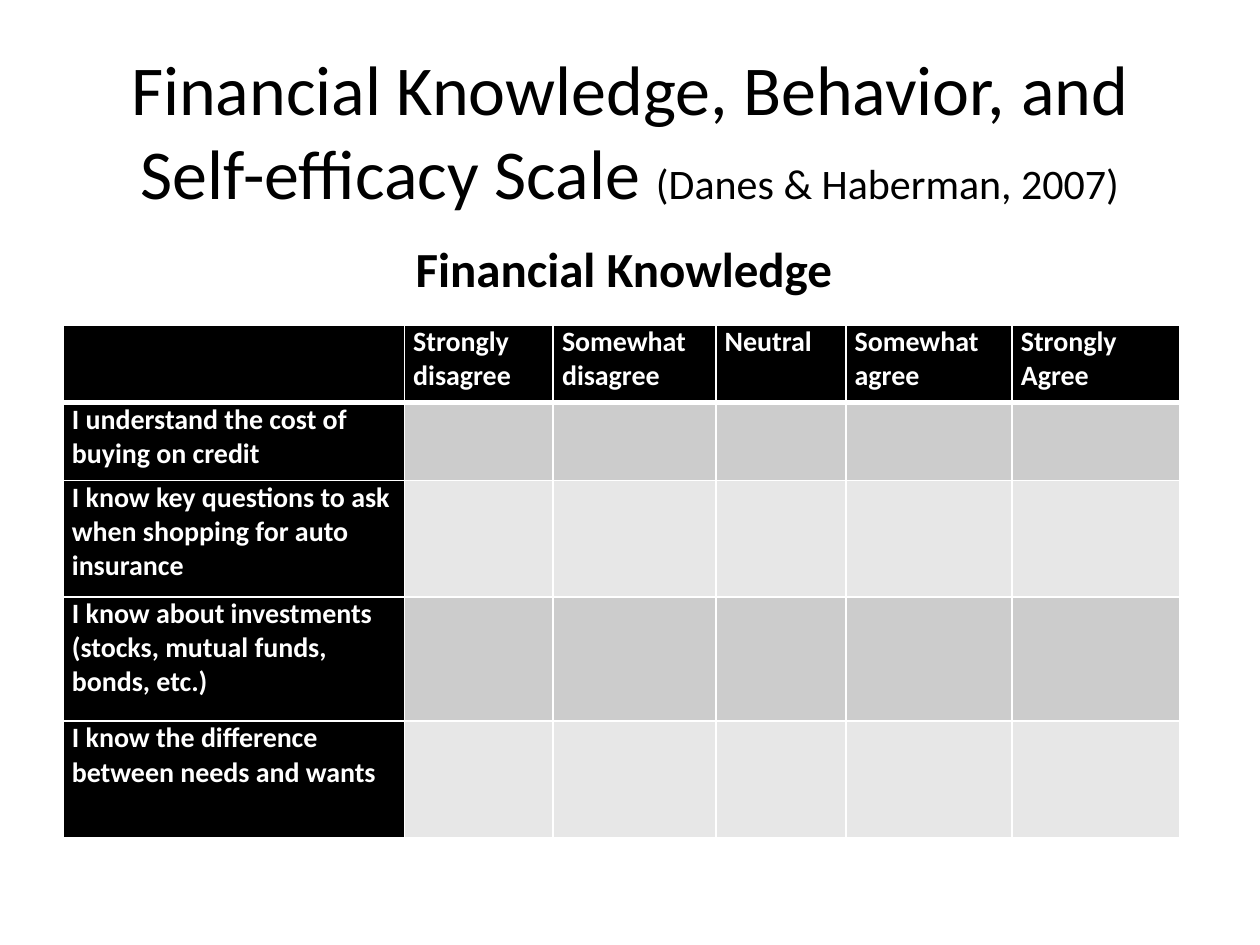
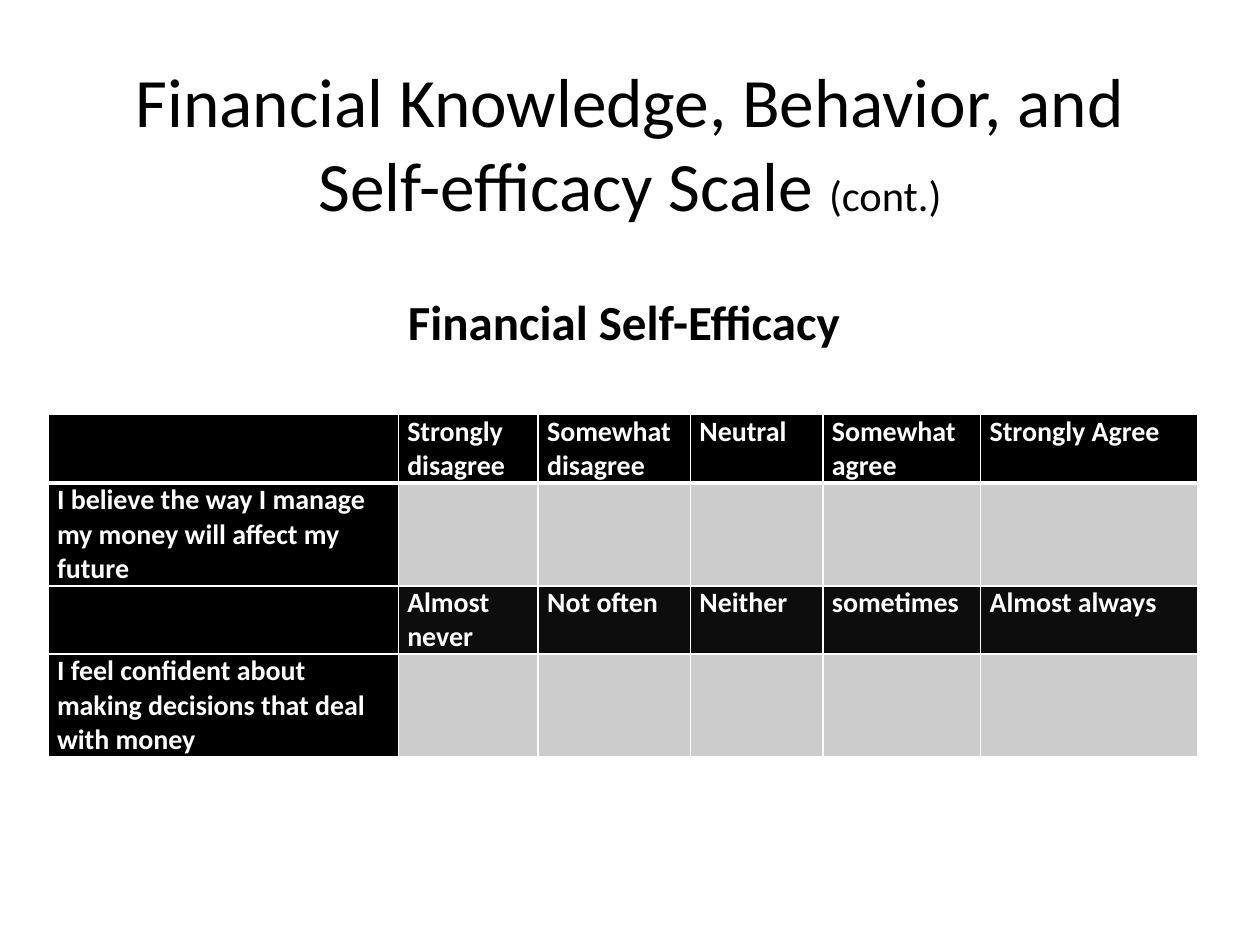
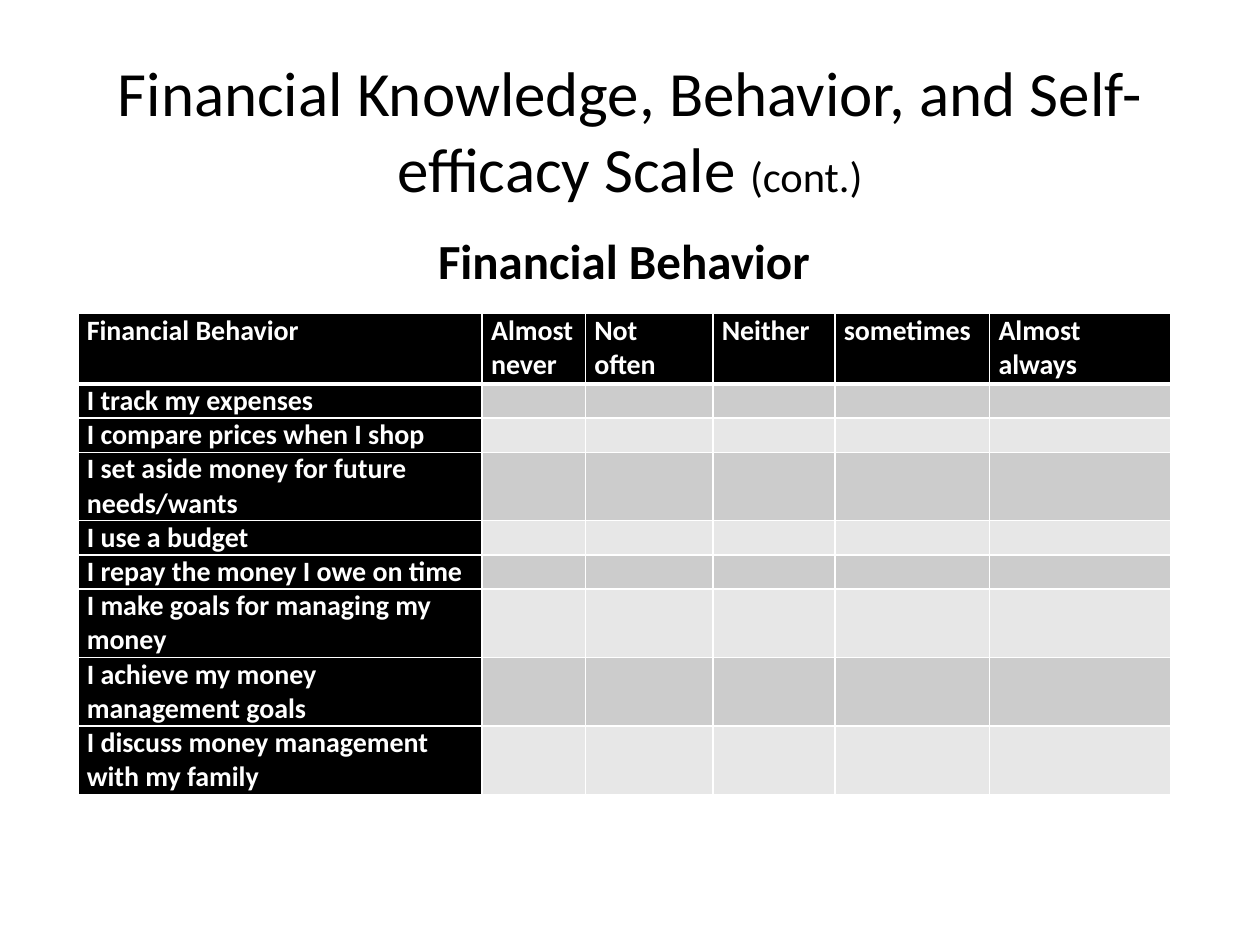
from dataclasses import dataclass

from lxml import etree
from pptx import Presentation
from pptx.dml.color import RGBColor
from pptx.enum.text import MSO_ANCHOR, PP_ALIGN
from pptx.oxml.ns import qn
from pptx.slide import Slide
from pptx.table import _Cell
from pptx.text.text import _Paragraph
from pptx.util import Cm, Pt

CENTER = PP_ALIGN.CENTER
MIDDLE = MSO_ANCHOR.MIDDLE

COLORS = {
    "black": "000000",
    "near_black": "0D0D0D",
    "white": "FFFFFF",
    "dark_band": "CCCCCC",
    "light_band": "E7E7E7",
}
FONT = "Calibri"
TITLE = "Financial Knowledge, Behavior, and Self-efficacy Scale "
CELL_SIZE = 16
ONE_LINE, TWO_LINES, THREE_LINES = 0.69, 1.38, 2.07

AGREEMENT = ("Strongly disagree", "Somewhat disagree", "Neutral", "Somewhat agree", "Strongly Agree")
FREQUENCY = ("Almost never", "Not often", "Neither", "sometimes", "Almost always")


@dataclass
class Row:
    height: float
    label: str
    answers: tuple[str, ...] = ("",) * 5


@dataclass
class Scale:
    """One slide of the questionnaire; lengths in centimetres, sizes in points."""
    title_top: float
    title_size: float
    note: str
    note_size: float
    heading: str
    heading_top: float
    table_left: float
    table_top: float
    columns: tuple[float, ...]
    rows: tuple[Row, ...]


SCALES = (
    Scale(
        1.02, 40, "(Danes & Haberman, 2007)", 24,
        "Financial Knowledge", 4.67,
        1.27, 6.55, (6.88, 3, 3.28, 2.62, 3.35, 3.38),
        (
            Row(1.57, "", AGREEMENT),
            Row(1.57, "I understand the cost of buying on credit"),
            Row(2.34, "I know key questions to ask when shopping for auto insurance"),
            Row(2.51, "I know about investments (stocks, mutual funds, bonds, etc.)"),
            Row(2.34, "I know the difference between needs and wants"),
        ),
    ),
    Scale(
        1.27, 39.6, "(cont.)", 24.3,
        "Financial Self-Efficacy", 5.74,
        0.97, 8.36, (7.06, 2.82, 3.07, 2.67, 3.18, 4.37),
        (
            Row(TWO_LINES, "", AGREEMENT),
            Row(THREE_LINES, "I believe the way I manage my money will affect my future"),
            Row(TWO_LINES, "", FREQUENCY),
            Row(THREE_LINES, "I feel confident about making decisions that deal with money"),
        ),
    ),
    Scale(
        1.02, 36, "(cont.)", 24.3,
        "Financial Behavior", 4.52,
        1.57, 6.32, (8.15, 2.08, 2.57, 2.46, 3.12, 3.66),
        (
            Row(1.42, "Financial Behavior", FREQUENCY),
            Row(ONE_LINE, "I track my expenses"),
            Row(ONE_LINE, "I compare prices when I shop"),
            Row(TWO_LINES, "I set aside money for future needs/wants"),
            Row(ONE_LINE, "I use a budget"),
            Row(ONE_LINE, "I repay the money I owe on time"),
            Row(TWO_LINES, "I make goals for managing my money"),
            Row(TWO_LINES, "I achieve my money management goals"),
            Row(TWO_LINES, "I discuss money management with my family"),
        ),
    ),
)


def rgb(name: str) -> RGBColor:
    return RGBColor.from_string(COLORS[name])


def set_font(para: _Paragraph, color: str, size: float | None = None, bold: bool = False) -> None:
    para.font.name = FONT
    para.font.color.rgb = rgb(color)
    para.font.bold = bold
    if size:
        para.font.size = Pt(size)


def add_centered_box(page: Slide, left: float, top: float, width: float, height: float) -> _Paragraph:
    box = page.shapes.add_textbox(Cm(left), Cm(top), Cm(width), Cm(height))
    box.text_frame.word_wrap = True
    box.text_frame.vertical_anchor = MIDDLE
    para = box.text_frame.paragraphs[0]
    para.alignment = CENTER
    return para


def add_title(page: Slide, scale: Scale) -> None:
    para = add_centered_box(page, 1.27, scale.title_top, 22.86, 3.18)
    set_font(para, "black")
    for text, size in ((TITLE, scale.title_size), (scale.note, scale.note_size)):
        span = para.add_run()
        span.text = text
        span.font.size = Pt(size)


def add_heading(page: Slide, scale: Scale) -> None:
    para = add_centered_box(page, 7.09, scale.heading_top, 10.97, 1.45)
    para.text = scale.heading
    set_font(para, "black", 28, bold=True)


def set_borders(cell: _Cell, top: float, bottom: float) -> None:
    properties = cell._tc.get_or_add_tcPr()
    for tag, width in (("a:lnL", 1), ("a:lnR", 1), ("a:lnT", top), ("a:lnB", bottom)):
        line = etree.SubElement(properties, qn(tag), w=str(Pt(width)))
        fill = etree.SubElement(line, qn("a:solidFill"))
        etree.SubElement(fill, qn("a:srgbClr"), val=COLORS["white"])


def fill_name(row_index: int, column_index: int, text: str) -> str:
    if row_index == 0 or column_index == 0:
        return "black"
    if text:
        return "near_black"
    return "dark_band" if row_index % 2 else "light_band"


def fill_cell(cell: _Cell, text: str, color: str) -> None:
    cell.margin_left = cell.margin_right = Cm(0.18)
    cell.margin_top = cell.margin_bottom = 0
    cell.fill.solid()
    cell.fill.fore_color.rgb = rgb(color)
    para = cell.text_frame.paragraphs[0]
    para.text = text
    set_font(para, "white", CELL_SIZE, bold=True)
    if not text:
        etree.SubElement(para._p, qn("a:endParaRPr"), sz=str(CELL_SIZE * 100))


def add_answer_table(page: Slide, scale: Scale) -> None:
    frame = page.shapes.add_table(
        len(scale.rows), len(scale.columns), Cm(scale.table_left), Cm(scale.table_top),
        Cm(sum(scale.columns)), Cm(sum(row.height for row in scale.rows)),
    )
    table = frame.table
    for column, width in zip(table.columns, scale.columns):
        column.width = Cm(width)
    for row_index, row in enumerate(scale.rows):
        table.rows[row_index].height = Cm(row.height)
        top = 3 if row_index == 1 else 1
        bottom = 3 if row_index == 0 else 1
        for column_index, text in enumerate((row.label, *row.answers)):
            cell = table.cell(row_index, column_index)
            set_borders(cell, top, bottom)
            fill_cell(cell, text, fill_name(row_index, column_index, text))


def main() -> None:
    deck = Presentation()
    deck.slide_width, deck.slide_height = Cm(25.4), Cm(19.05)
    for scale in SCALES:
        page = deck.slides.add_slide(deck.slide_layouts[6])
        add_title(page, scale)
        add_answer_table(page, scale)
        add_heading(page, scale)
    deck.save("out.pptx")


if __name__ == "__main__":
    main()
